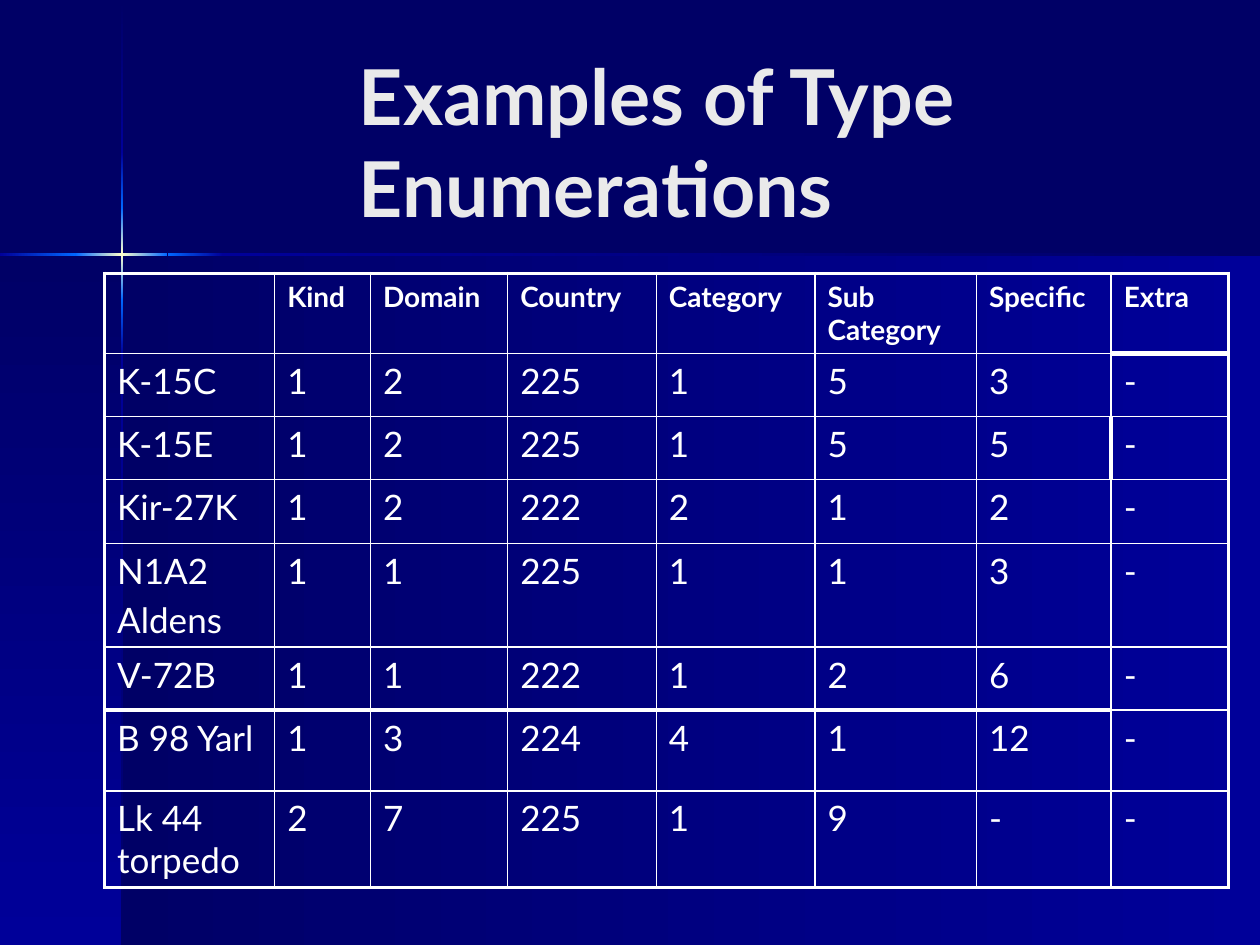
from lxml import etree
from pptx import Presentation
from pptx.dml.color import RGBColor
from pptx.enum.shapes import MSO_SHAPE
from pptx.enum.text import MSO_ANCHOR
from pptx.oxml import parse_xml
from pptx.oxml.ns import nsdecls, qn
from pptx.util import Inches, Pt

RECT = MSO_SHAPE.RECTANGLE
MIDDLE = MSO_ANCHOR.MIDDLE
FONT = "Lato"
WIDTH, HEIGHT = 10, 7.5
CROSS_X, CROSS_Y, RAY = 0.97, 2.02, 0.02
NAVY, BLUE, BRIGHT, GLOW, WHITE = "000066", "000099", "0066FF", "FFFFCC", "FFFFFF"
RIGHT, DOWN = 0, 90

VERTICAL_RAYS = [
    (0, 1.21, [NAVY, BLUE]),
    (1.21, 1.65, [BLUE, BRIGHT]),
    (1.65, 2.38, [BRIGHT, GLOW, BRIGHT]),
    (2.38, 2.82, [BRIGHT, BLUE]),
    (2.82, HEIGHT, [BLUE, NAVY]),
]
HORIZONTAL_RAYS = [
    (0, 0.6, [BLUE, BRIGHT]),
    (0.6, 1.33, [BRIGHT, GLOW, BRIGHT]),
    (1.33, 1.77, [BRIGHT, BLUE]),
    (1.77, WIDTH, [BLUE, NAVY]),
]

COLUMNS = [1.35, 0.76, 1.09, 1.18, 1.26, 1.28, 1.07, 0.93]
ROWS = [0.6, 0.5, 0.5, 0.51, 0.5, 0.5, 0.64, 0.5]
ENUMERATIONS = [
    ["", "Kind", "Domain", "Country", "Category", "Sub Category", "Specific", "Extra"],
    ["K-15C", "1", "2", "225", "1", "5", "3", "-"],
    ["K-15E", "1", "2", "225", "1", "5", "5", "-"],
    ["Kir-27K", "1", "2", "222", "2", "1", "2", "-"],
    ["N1A2\nAldens", "1", "1", "225", "1", "1", "3", "-"],
    ["V-72B", "1", "1", "222", "1", "2", "6", "-"],
    ["B 98 Yarl", "1", "3", "224", "4", "1", "12", "-"],
    ["Lk 44 torpedo", "2", "7", "225", "1", "9", "-", "-"],
]
THIN, THICK, HEAVY = 1, 2.25, 3


def rgb(value):
    """Turn a hex string into a colour."""
    return RGBColor.from_string(value)


def set_font(p, size, color, bold):
    """Set the font of a whole paragraph."""
    p.font.name = FONT
    p.font.size = Pt(size)
    p.font.bold = bold
    p.font.color.rgb = rgb(color)


def add_gradient(s, left, top, width, height, colors, angle):
    """Add a borderless rectangle with evenly spaced gradient stops."""
    sp = s.shapes.add_shape(RECT, *map(Inches, (left, top, width, height)))
    sp.shadow.inherit = False
    sp.line.fill.background()
    sp.fill.gradient()
    grad = sp.fill._xPr.find(qn("a:gradFill"))
    stops = grad.find(qn("a:gsLst"))
    for stop in list(stops):
        stops.remove(stop)
    for i, color in enumerate(colors):
        position = 100000 * i // (len(colors) - 1)
        gs = etree.SubElement(stops, qn("a:gs"), pos=str(position))
        etree.SubElement(gs, qn("a:srgbClr"), val=color)
    grad.find(qn("a:lin")).set("ang", str(angle * 60000))


def add_backdrop(s):
    """Paint the two panels and the glowing cross."""
    s.background.fill.solid()
    s.background.fill.fore_color.rgb = rgb(NAVY)
    depth = HEIGHT - CROSS_Y
    add_gradient(s, CROSS_X, CROSS_Y, WIDTH - CROSS_X, depth, [NAVY, BLUE], RIGHT)
    add_gradient(s, 0, CROSS_Y, CROSS_X, depth, [NAVY, BLUE], DOWN)
    for start, end, colors in VERTICAL_RAYS:
        add_gradient(s, CROSS_X - RAY / 2, start, RAY, end - start, colors, DOWN)
    for start, end, colors in HORIZONTAL_RAYS:
        add_gradient(s, start, CROSS_Y - RAY / 2, end - start, RAY, colors, RIGHT)


def add_title(s, text):
    """Add the slide title."""
    tf = s.shapes.add_textbox(*map(Inches, (2.75, 0.33, 6.92, 1.57))).text_frame
    tf.word_wrap = True
    tf.vertical_anchor = MIDDLE
    p = tf.paragraphs[0]
    p.text = text
    set_font(p, 44, "EAEAEA", True)


def rule_above(row, col):
    """Give the width of the horizontal rule above a cell."""
    last = len(COLUMNS) - 1
    if (row, col) == (1, last):
        return HEAVY
    outer = row in (0, len(ROWS))
    return THICK if outer or (row == 6 and col < last) else THIN


def rule_before(row, col):
    """Give the width of the vertical rule left of a cell."""
    outer = col in (0, len(COLUMNS))
    return THICK if outer or (row, col) == (2, 7) else THIN


def set_borders(cell, row, col):
    """Draw the four borders of a cell."""
    widths = {
        "L": rule_before(row, col),
        "R": rule_before(row, col + 1),
        "T": rule_above(row, col),
        "B": rule_above(row + 1, col),
    }
    tc_pr = cell._tc.get_or_add_tcPr()
    for side, width in widths.items():
        tc_pr.append(parse_xml(
            f'<a:ln{side} {nsdecls("a")} w="{Pt(width)}"><a:solidFill>'
            f'<a:srgbClr val="{WHITE}"/></a:solidFill></a:ln{side}>'))


def fill_cell(cell, text, row, col):
    """Write and style one table cell."""
    set_borders(cell, row, col)
    cell.fill.background()
    cell.text = text
    header = row == 0
    for i, p in enumerate(cell.text_frame.paragraphs):
        if i:
            p.space_before = Pt(4)
        set_font(p, 16 if header else 20, WHITE, header)


def add_enumerations(s):
    """Add the table of type enumerations."""
    box = (0.83, 2.17, sum(COLUMNS), sum(ROWS))
    table = s.shapes.add_table(len(ROWS), len(COLUMNS), *map(Inches, box)).table
    table.horz_banding = False
    table.first_row = False
    for column, width in zip(table.columns, COLUMNS):
        column.width = Inches(width)
    for row, height in zip(table.rows, ROWS):
        row.height = Inches(height)
    for r, values in enumerate(ENUMERATIONS):
        for c, text in enumerate(values):
            fill_cell(table.cell(r, c), text, r, c)


def main():
    """Build the slide and save it."""
    prs = Presentation()
    prs.slide_width, prs.slide_height = Inches(WIDTH), Inches(HEIGHT)
    s = prs.slides.add_slide(prs.slide_layouts[6])
    add_backdrop(s)
    add_title(s, "Examples of Type Enumerations")
    add_enumerations(s)
    prs.save("out.pptx")


if __name__ == "__main__":
    main()
